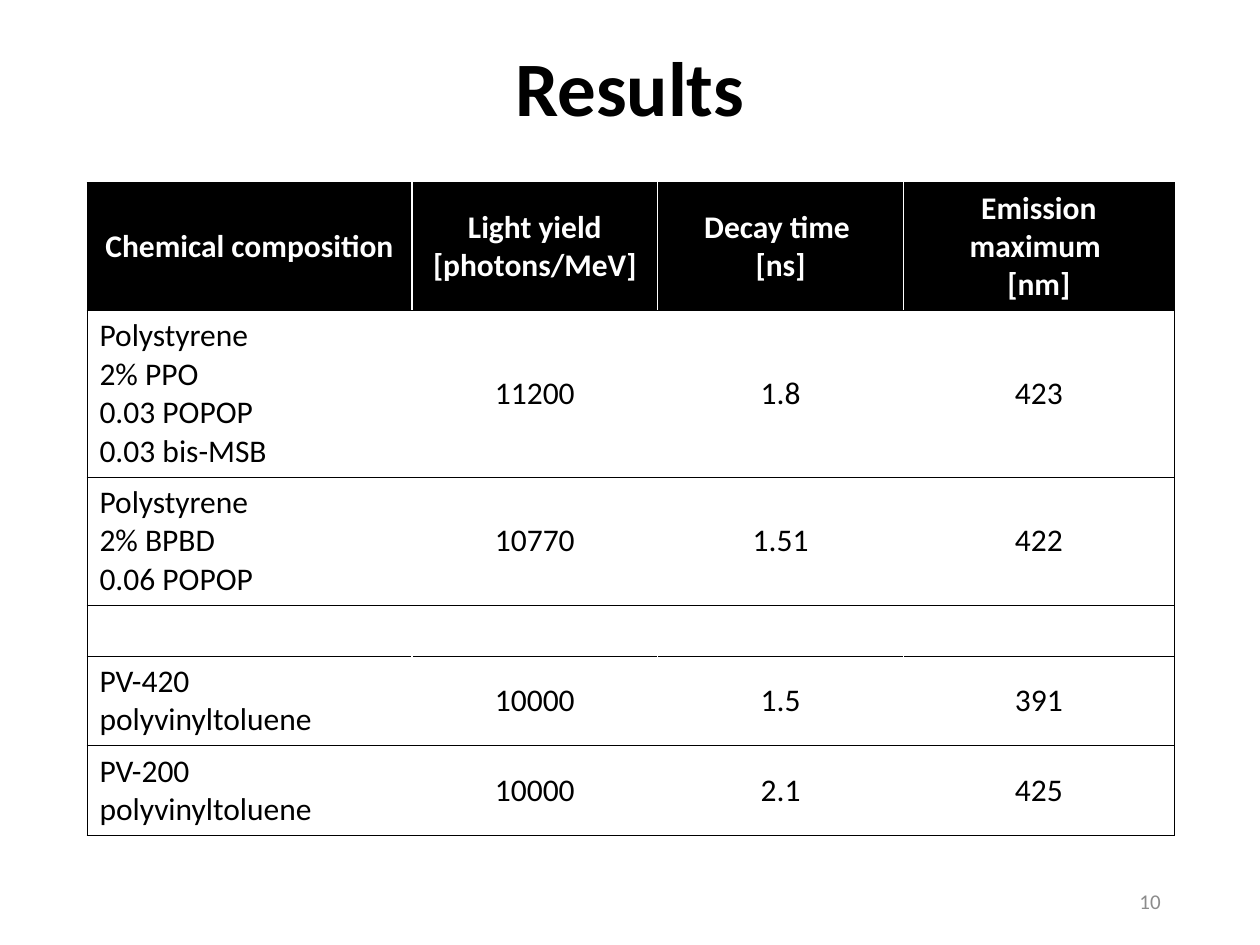
"""Build the results slide comparing scintillator compositions."""
from lxml import etree
from pptx import Presentation
from pptx.dml.color import RGBColor
from pptx.enum import text
from pptx.oxml import ns
from pptx.util import Inches, Pt


def style(paragraph, size, color, bold=False, align=text.PP_ALIGN.CENTER):
    paragraph.alignment = align
    font = paragraph.font
    font.name, font.size, font.bold = "Calibri", Pt(size), bold
    font.color.rgb = RGBColor.from_string(color)


def add_border(cell, side):
    line = etree.SubElement(cell._tc.get_or_add_tcPr(), ns.qn(f"a:ln{side}"), w=str(Pt(0.5)))
    fill = etree.SubElement(line, ns.qn("a:solidFill"))
    etree.SubElement(fill, ns.qn("a:srgbClr"), val="000000")


deck = Presentation()
deck.slide_width, deck.slide_height = Inches(10), Inches(7.5)
slide = deck.slides.add_slide(deck.slide_layouts[5])

title = slide.shapes.title
title.left, title.top, title.width, title.height = Inches(0.69), Inches(0), Inches(8.62), Inches(1.45)
title.text_frame.text = "Results"
title.text_frame.vertical_anchor = text.MSO_ANCHOR.MIDDLE
title.text_frame.paragraphs[0].line_spacing = 0.9
style(title.text_frame.paragraphs[0], 44, "000000", bold=True)

results = [
    ["Chemical composition", "Light yield [photons/MeV]", "Decay time \v[ns]", "Emission maximum \v[nm]"],
    ["Polystyrene \v2% PPO \v0.03 POPOP \v0.03 bis-MSB", "11200", "1.8", "423"],
    ["Polystyrene \v2% BPBD \v0.06 POPOP", "10770", "1.51", "422"],
    ["", "", "", ""],
    ["PV-420\npolyvinyltoluene", "10000", "1.5", "391"],
    ["PV-200\npolyvinyltoluene", "10000", "2.1", "425"],
]
column_widths = [2.58, 1.95, 1.95, 2.15]
row_heights = [1.01, 1.32, 1.01, 0.4, 0.7, 0.7]

table = slide.shapes.add_table(len(results), len(column_widths), Inches(0.69), Inches(1.45),
                               Inches(sum(column_widths)), Inches(sum(row_heights))).table
table.horz_banding = False
for column, width in zip(table.columns, column_widths):
    column.width = Inches(width)
for row, height in zip(table.rows, row_heights):
    row.height = Inches(height)

for r, values in enumerate(results):
    is_header = r == 0
    for c, value in enumerate(values):
        cell = table.cell(r, c)
        is_composition = c == 0 and not is_header
        if c == 0:
            add_border(cell, "L")
        if c == len(values) - 1 or not any(values):
            add_border(cell, "R")
        add_border(cell, "T")
        add_border(cell, "B")
        cell.fill.solid()
        cell.fill.fore_color.rgb = RGBColor.from_string("000000" if is_header else "FFFFFF")
        cell.vertical_anchor = text.MSO_ANCHOR.TOP if is_composition else text.MSO_ANCHOR.MIDDLE
        cell.text = value
        for paragraph in cell.text_frame.paragraphs:
            style(paragraph, 18, "FFFFFF" if is_header else "000000", is_header,
                  text.PP_ALIGN.LEFT if is_composition else text.PP_ALIGN.CENTER)
    if not any(values):
        table.cell(r, 0).merge(table.cell(r, len(values) - 1))

page_number = slide.shapes.add_textbox(Inches(7.06), Inches(6.95), Inches(2.25), Inches(0.4)).text_frame
page_number.word_wrap = True
page_number.vertical_anchor = text.MSO_ANCHOR.MIDDLE
page_number.text = "10"
style(page_number.paragraphs[0], 12, "8C8C8C", align=text.PP_ALIGN.RIGHT)

deck.save("out.pptx")
